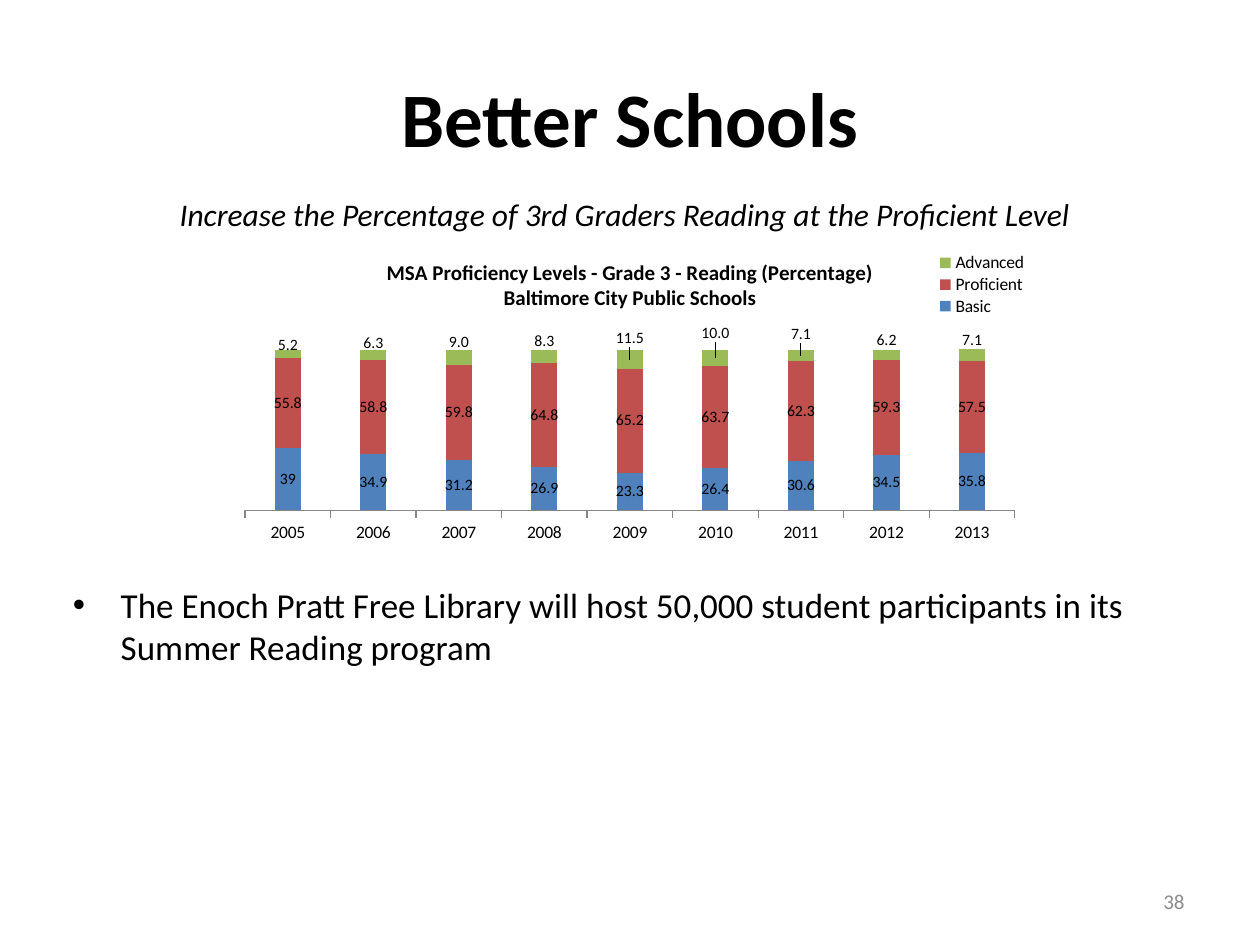
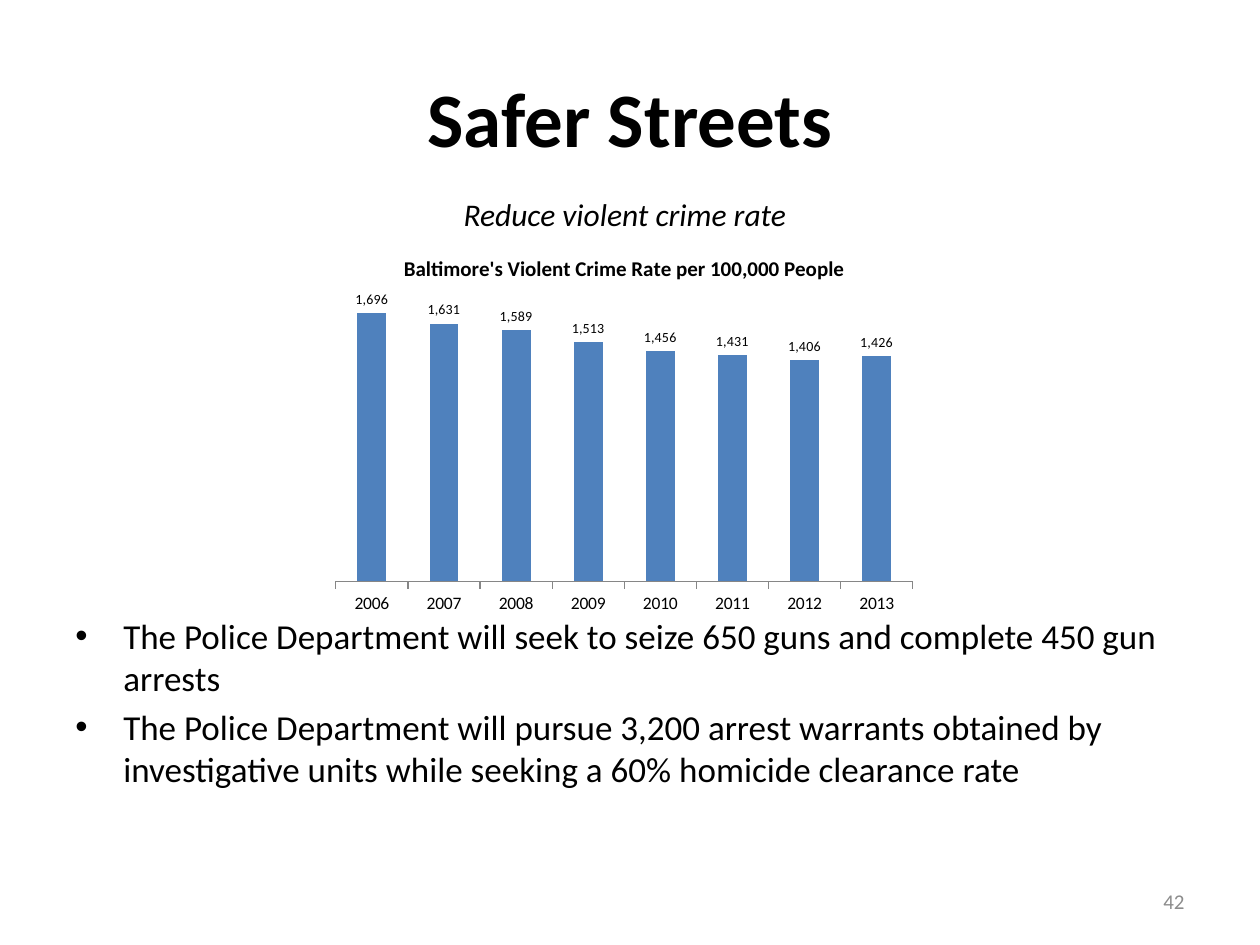
"""Build two city goal slides, each with a chart and bulleted targets."""
import pptx
import pptx.chart.data
import pptx.dml.color
import pptx.enum.chart
import pptx.enum.text
import pptx.oxml
import pptx.oxml.ns
import pptx.util
from pptx.util import Inches

FONT = "Calibri"
BLACK, GREY, AXIS_GREY = "000000", "8C8C8C", "868686"
BLUE, RED, GREEN = "4F81BD", "C0504D", "9BBB59"
KINDS = pptx.enum.chart.XL_CHART_TYPE
LABEL_PLACES = pptx.enum.chart.XL_LABEL_POSITION
ALIGN = pptx.enum.text.PP_ALIGN
ANCHOR = pptx.enum.text.MSO_ANCHOR

SLIDES = [
    {
        "title": "Better Schools",
        "goal": "Increase the Percentage of 3rd Graders Reading at the Proficient Level",
        "number": "38",
        "bullets": ["The Enoch Pratt Free Library will host 50,000 student participants "
                    "in its Summer Reading program"],
        "bullets_at": (0.48, 4.58, 9.02, 2.12),
        "chart": {
            "kind": KINDS.COLUMN_STACKED,
            "at": (1.75, 1.92, 6.5, 2.42),
            "plot": (0.03, 0.25, 0.94, 0.63),
            "legend": (0.87, 0.03, 0.12, 0.22),
            "title": ["MSA Proficiency Levels - Grade 3 - Reading (Percentage)",
                      "Baltimore City Public Schools"],
            "years": range(2005, 2014),
            "top": 120, "gap": 228, "overlap": 100,
            "label_size": 9, "label_place": None,
            "series": [
                {"name": "Basic", "color": BLUE, "format": "General",
                 "values": [39, 34.9, 31.2, 26.9, 23.3, 26.4, 30.6, 34.5, 35.8]},
                {"name": "Proficient", "color": RED, "format": "General",
                 "values": [55.8, 58.8, 59.8, 64.8, 65.2, 63.7, 62.3, 59.3, 57.5]},
                {"name": "Advanced", "color": GREEN, "format": "#,##0.0",
                 "values": [5.2, 6.3, 9, 8.3, 11.5, 10, 7.1, 6.2, 7.1],
                 "raised": [0.03, 0.04, 0.05, 0.05, 0.07, 0.08, 0.07, 0.05, 0.05]},
            ],
        },
    },
    {
        "title": "Safer Streets",
        "goal": "Reduce violent crime rate",
        "number": "42",
        "bullets": ["The Police Department will seek to seize 650 guns and complete "
                    "450 gun arrests",
                    "The Police Department will pursue 3,200 arrest warrants obtained by "
                    "investigative units while seeking a 60% homicide clearance rate"],
        "bullets_at": (0.5, 4.83, 9.02, 2.12),
        "chart": {
            "kind": KINDS.COLUMN_CLUSTERED,
            "at": (2.57, 1.87, 4.77, 3.05),
            "plot": (0.02, 0.16, 0.96, 0.74),
            "title": ["Baltimore's Violent Crime Rate per 100,000 People"],
            "years": range(2006, 2014),
            "top": 1800, "gap": 150, "overlap": 0,
            "label_size": 8, "label_place": LABEL_PLACES.OUTSIDE_END,
            "series": [
                {"name": "Series 1", "color": BLUE, "format": "#,##0",
                 "values": [1696, 1631, 1589, 1513, 1456, 1431, 1402, 1426],
                 "renamed": {6: "1,406"}},
            ],
        },
    },
]


def rgb(color):
    return pptx.dml.color.RGBColor.from_string(color)


def style_font(font, size, color=BLACK, bold=False, italic=False):
    font.name, font.size = FONT, pptx.util.Pt(size)
    font.bold, font.italic = bold, italic
    font.color.rgb = rgb(color)


def add_bullet(para):
    properties = para._p.get_or_add_pPr()
    properties.set("marL", str(Inches(0.38)))
    properties.set("indent", str(-Inches(0.38)))
    for tag, key, value in (("buFont", "typeface", "Arial"), ("buChar", "char", "•")):
        mark = pptx.oxml.parse_xml(
            f'<a:{tag} {pptx.oxml.ns.nsdecls("a")} {key}="{value}"/>')
        properties.append(mark)


def add_text(page, lines, at, align=ALIGN.LEFT, anchor=ANCHOR.TOP, bullets=False, **style):
    box = page.shapes.add_textbox(*map(Inches, at))
    frame = box.text_frame
    frame.word_wrap = True
    frame.vertical_anchor = anchor
    for index, line in enumerate(lines):
        para = frame.paragraphs[0] if index == 0 else frame.add_paragraph()
        para.alignment = align
        if index:
            para.space_before = pptx.util.Pt(4)
        if bullets:
            add_bullet(para)
        span = para.add_run()
        span.text = line
        style_font(span.font, **style)


def chart_element(tag, content="", **attributes):
    pairs = "".join(f' {key}="{value}"' for key, value in attributes.items())
    return pptx.oxml.parse_xml(
        f'<c:{tag} {pptx.oxml.ns.nsdecls("c")}{pairs}>{content}</c:{tag}>')


def manual_layout(place, inner=False):
    parts = ['<c:layoutTarget val="inner"/>'] if inner else []
    if len(place) == 4:
        parts += ['<c:xMode val="edge"/>', '<c:yMode val="edge"/>']
    parts += [f'<c:{key} val="{value}"/>' for key, value in zip("xywh", place)]
    return chart_element("layout", f'<c:manualLayout>{"".join(parts)}</c:manualLayout>')


def set_layout(parent, index, layout):
    for old in parent.findall(pptx.oxml.ns.qn("c:layout")):
        parent.remove(old)
    parent.insert(index, layout)


def style_series(series, facts, size, place):
    series.format.fill.solid()
    series.format.fill.fore_color.rgb = rgb(facts["color"])
    series.invert_if_negative = False
    labels = series.data_labels
    labels.show_value = True
    labels.number_format, labels.number_format_is_linked = facts["format"], False
    style_font(labels.font, size)
    if place is not None:
        labels.position = place
    for index, rise in enumerate(facts.get("raised", [])):
        style_font(series.points[index].data_label.font, size)
        label = series._element.findall(".//" + pptx.oxml.ns.qn("c:dLbl"))[index]
        set_layout(label, 1, manual_layout((0, -rise)))
        label.insert(2, chart_element("numFmt", formatCode=facts["format"], sourceLinked=0))
    for index, text in facts.get("renamed", {}).items():
        label = series.points[index].data_label
        span = label.text_frame.paragraphs[0].add_run()
        span.text = text
        style_font(span.font, size)
        label.position = place


def add_goal_chart(page, facts):
    data = pptx.chart.data.CategoryChartData()
    data.categories = [str(year) for year in facts["years"]]
    for series in facts["series"]:
        data.add_series(series["name"], series["values"])
    chart = page.shapes.add_chart(facts["kind"], *map(Inches, facts["at"]), data).chart
    style_font(chart.font, 10)

    title = chart.chart_title.text_frame
    for index, line in enumerate(facts["title"]):
        para = title.paragraphs[0] if index == 0 else title.add_paragraph()
        span = para.add_run()
        span.text = line
        style_font(span.font, 12, bold=True)

    years, values = chart.category_axis, chart.value_axis
    years.major_tick_mark = pptx.enum.chart.XL_TICK_MARK.OUTSIDE
    years.format.line.color.rgb = rgb(AXIS_GREY)
    style_font(years.tick_labels.font, 10)
    values.minimum_scale, values.maximum_scale = 0, facts["top"]
    values.has_major_gridlines = False
    values.visible = False

    plot = chart.plots[0]
    plot.gap_width, plot.overlap = facts["gap"], facts["overlap"]
    plot.vary_by_categories = False
    for series, details in zip(plot.series, facts["series"]):
        style_series(series, details, facts["label_size"], facts["label_place"])
    plot_area = chart._chartSpace.chart.plotArea
    set_layout(plot_area, 0, manual_layout(facts["plot"], inner=True))

    chart.has_legend = "legend" in facts
    if chart.has_legend:
        legend = chart.legend
        legend.position = pptx.enum.chart.XL_LEGEND_POSITION.RIGHT
        legend.include_in_layout = False
        style_font(legend.font, 10)
        set_layout(legend._element, 1, manual_layout(facts["legend"]))


def add_goal_slide(deck, facts):
    page = deck.slides.add_slide(deck.slide_layouts[6])
    add_text(page, [facts["title"]], (0.5, 0.3, 9, 1.25), align=ALIGN.CENTER,
             anchor=ANCHOR.MIDDLE, size=44, bold=True)
    add_text(page, [facts["goal"]], (0, 1.5, 9.92, 0.4), align=ALIGN.CENTER,
             size=18, italic=True)
    add_goal_chart(page, facts["chart"])
    add_text(page, facts["bullets"], facts["bullets_at"], bullets=True, size=20)
    add_text(page, [facts["number"]], (7.17, 6.95, 2.33, 0.4), align=ALIGN.RIGHT,
             anchor=ANCHOR.MIDDLE, size=12, color=GREY)


def main():
    deck = pptx.Presentation()
    deck.slide_width, deck.slide_height = Inches(10), Inches(7.5)
    for facts in SLIDES:
        add_goal_slide(deck, facts)
    deck.save("out.pptx")


if __name__ == "__main__":
    main()
